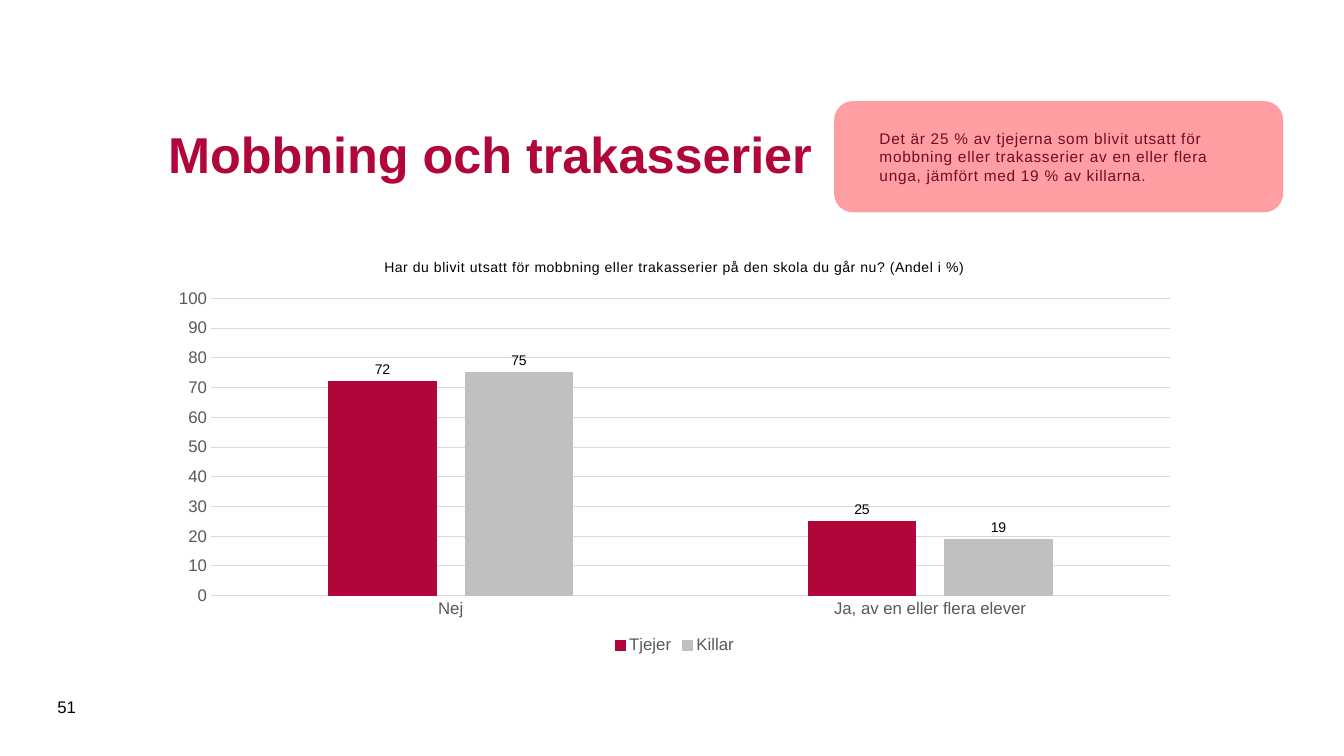
"""Build a slide comparing bullying among girls and boys in a column chart."""
from lxml import etree
from pptx import Presentation
from pptx.chart.data import CategoryChartData
from pptx.dml.color import RGBColor
from pptx.enum.chart import XL_CHART_TYPE, XL_LABEL_POSITION, XL_LEGEND_POSITION, XL_TICK_MARK
from pptx.enum.shapes import MSO_SHAPE
from pptx.enum.text import MSO_ANCHOR, PP_ALIGN
from pptx.oxml import parse_xml
from pptx.oxml.ns import nsdecls, qn
from pptx.util import Inches, Pt

CRIMSON = RGBColor(0xB1, 0x06, 0x3A)
WINE = RGBColor(0x79, 0x07, 0x26)
PINK = RGBColor(0xFF, 0x9D, 0xA2)
SILVER = RGBColor(0xBF, 0xBF, 0xBF)
GRID = RGBColor(0xD9, 0xD9, 0xD9)
GRAY = RGBColor(0x59, 0x59, 0x59)
BLACK = RGBColor(0, 0, 0)
FONT = "Arial"

TITLE = "Mobbning och trakasserier"
PAGE = "51"
NOTE = ("Det är 25 % av tjejerna som blivit utsatt för mobbning eller trakasserier "
        "av en eller flera unga, jämfört med 19 % av killarna.")
QUESTION = "Har du blivit utsatt för mobbning eller trakasserier på den skola du går nu? (Andel i %)"
ANSWERS = ["Nej", "Ja, av en eller flera elever"]
SERIES = [("Tjejer", (72, 25), CRIMSON), ("Killar", (75, 19), SILVER)]
NUMBER_FORMAT = "#,##0;#,##0"

TITLE_BOX = (1.57, 0.81, 10.24, 1.42)
PAGE_BOX = (0.47, 6.81, 0.57, 0.4)
NOTE_BOX = (8.28, 1.01, 4.44, 1.09)
CHART_BOX = (1.57, 2.4, 10.24, 4.13)
PLOT_BOX = (2.09, 2.96, 9.51, 2.95)


def style(font, size, color, bold=False):
    font.name, font.size, font.bold = FONT, Pt(size), bold
    font.color.rgb = color


def write(sp, text, size, color, bold=False):
    tf = sp.text_frame
    tf.text = text
    tf.word_wrap = True
    tf.vertical_anchor = MSO_ANCHOR.MIDDLE
    p = tf.paragraphs[0]
    p.alignment = PP_ALIGN.LEFT
    style(p.runs[0].font, size, color, bold)
    return p.runs[0]


def add_text(slide, box, *args):
    sp = slide.shapes.add_textbox(*map(Inches, box))
    write(sp, *args)


def space_letters(r):
    r.font._element.set("spc", "50")


def add_note(slide):
    sp = slide.shapes.add_shape(MSO_SHAPE.ROUNDED_RECTANGLE, *map(Inches, NOTE_BOX))
    sp.shadow.inherit = False
    sp.fill.solid()
    sp.fill.fore_color.rgb = PINK
    color = sp._element.spPr.find(qn("a:solidFill"))[0]
    etree.SubElement(color, qn("a:alpha")).set("val", "98000")
    sp.line.color.rgb = PINK
    sp.line.width = Pt(1)
    space_letters(write(sp, NOTE, 11, WINE))
    tf = sp.text_frame
    tf.margin_left = tf.margin_right = Inches(0.39)
    tf.margin_top = tf.margin_bottom = Inches(0.2)


def place_plot(chart):
    left, top, width, height = CHART_BOX
    x, y, w, h = PLOT_BOX
    parts = {"x": (x - left) / width, "y": (y - top) / height, "w": w / width, "h": h / height}
    values = "".join(f'<c:{k} val="{v:.3f}"/>' for k, v in parts.items())
    layout = parse_xml(
        f'<c:layout {nsdecls("c")}><c:manualLayout><c:layoutTarget val="inner"/>'
        f'<c:xMode val="edge"/><c:yMode val="edge"/>{values}</c:manualLayout></c:layout>')
    area = chart._chartSpace.chart.plotArea
    for old in area.findall(qn("c:layout")):
        area.remove(old)
    area.insert(0, layout)


def style_axes(chart):
    for axis in (chart.category_axis, chart.value_axis):
        axis.major_tick_mark = axis.minor_tick_mark = XL_TICK_MARK.NONE
        style(axis.tick_labels.font, 12, GRAY)
    values = chart.value_axis
    values.minimum_scale, values.maximum_scale, values.major_unit = 0, 100, 10
    values.tick_labels.number_format = NUMBER_FORMAT
    values.tick_labels.number_format_is_linked = False
    values.format.line.fill.background()
    for line in (chart.category_axis.format.line, values.major_gridlines.format.line):
        line.color.rgb = GRID
        line.width = Pt(0.75)


def style_series(series, color):
    fmt = series.format
    fmt.fill.solid()
    fmt.fill.fore_color.rgb = fmt.line.color.rgb = color
    fmt.line.width = Pt(0.75)
    series.invert_if_negative = False
    labels = series.data_labels
    labels.show_value = True
    labels.position = XL_LABEL_POSITION.OUTSIDE_END
    labels.number_format = NUMBER_FORMAT
    labels.number_format_is_linked = False
    style(labels.font, 10, BLACK)


def add_chart(slide):
    data = CategoryChartData()
    data.categories = ANSWERS
    for name, values, _ in SERIES:
        data.add_series(name, values)
    chart = slide.shapes.add_chart(
        XL_CHART_TYPE.COLUMN_CLUSTERED, *map(Inches, CHART_BOX), data).chart
    style(chart.font, 10, BLACK)
    tf = chart.chart_title.text_frame
    tf.text = QUESTION
    r = tf.paragraphs[0].runs[0]
    style(r.font, 10, BLACK)
    space_letters(r)
    chart.has_legend = True
    chart.legend.position = XL_LEGEND_POSITION.BOTTOM
    chart.legend.include_in_layout = False
    style(chart.legend.font, 12, GRAY)
    plot = chart.plots[0]
    plot.gap_width, plot.overlap, plot.vary_by_categories = 219, -27, False
    for series, (_, _, color) in zip(plot.series, SERIES):
        style_series(series, color)
    style_axes(chart)
    place_plot(chart)


def main():
    prs = Presentation()
    prs.slide_width, prs.slide_height = Inches(13.33), Inches(7.5)
    slide = prs.slides.add_slide(prs.slide_layouts[6])
    add_text(slide, TITLE_BOX, TITLE, 36, CRIMSON, True)
    add_text(slide, PAGE_BOX, PAGE, 12, BLACK)
    add_chart(slide)
    add_note(slide)
    prs.save("out.pptx")


if __name__ == "__main__":
    main()
